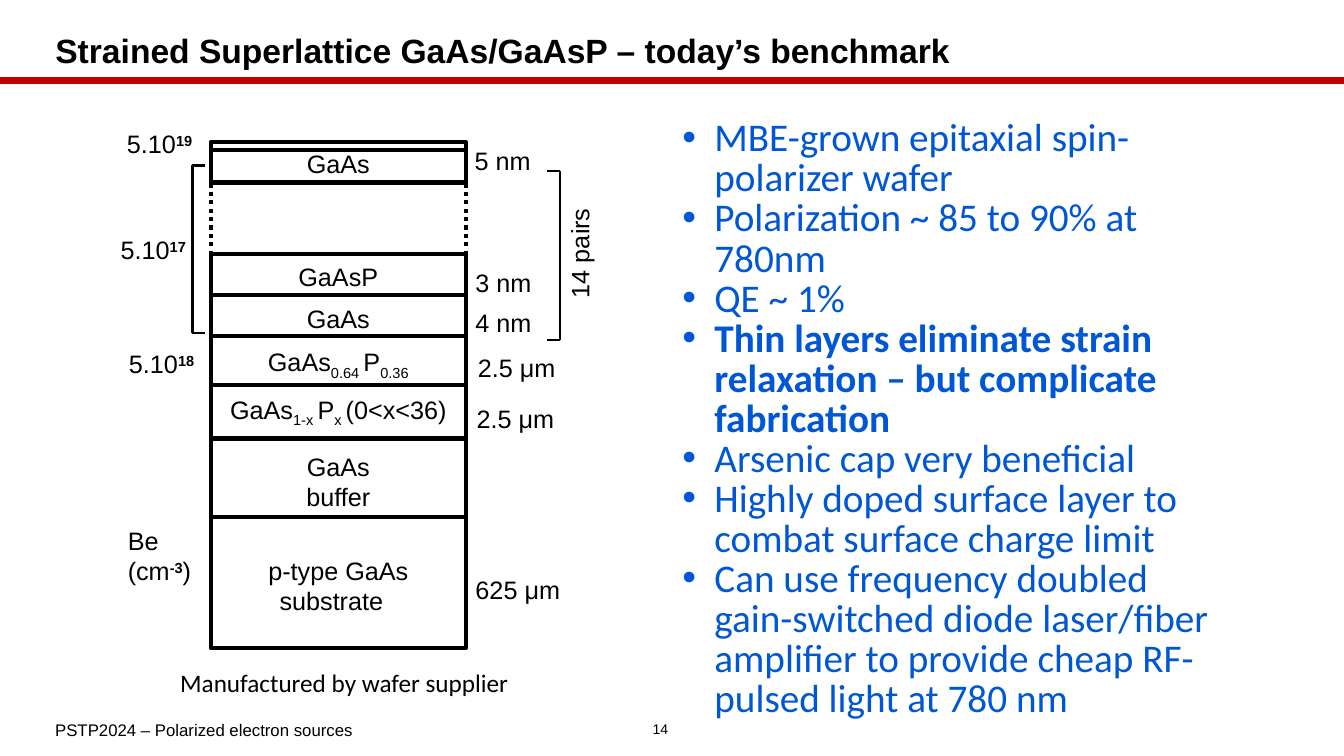
from lxml import etree
from pptx import Presentation
from pptx import util as u
from pptx.dml.color import RGBColor
from pptx.enum import dml, shapes, text
from pptx.oxml.ns import qn

BLACK, RED, BLUE = "000000", "C00000", "0057D6"
LEFT, RIGHT = 5.31, 11.74
LABEL = dict(name="Arial", size=u.Pt(18))
CENTER = text.PP_ALIGN.CENTER
SUP, SUB = 30000, -25000


def rgb(value):
    """Return the colour for a hex string."""
    return RGBColor.from_string(value)


def format_font(font, fmt, color=BLACK):
    """Set font attributes from a dict, and the font colour."""
    for key, value in fmt.items():
        setattr(font, key, value)
    font.color.rgb = rgb(color)


def add_run(p, content, fmt, color=BLACK):
    """Add a run given as a string or as (string, baseline)."""
    words, baseline = (content, 0) if isinstance(content, str) else content
    r = p.add_run()
    r.text = words
    format_font(r.font, fmt, color)
    if baseline:
        r._r.get_or_add_rPr().set("baseline", str(baseline))
    if baseline > 0:
        r.font.bold = True


def add_text(s, x, y, w, h, lines, fmt=LABEL, align=None, wrap=False,
             anchor=text.MSO_ANCHOR.TOP):
    """Add a text box holding lines, each a list of runs."""
    sp = s.shapes.add_textbox(u.Cm(x), u.Cm(y), u.Cm(w), u.Cm(h))
    tf = sp.text_frame
    tf.word_wrap = wrap
    tf.vertical_anchor = anchor
    for i, line in enumerate(lines):
        p = tf.paragraphs[0] if i == 0 else tf.add_paragraph()
        p.alignment = align
        for content in line:
            add_run(p, content, fmt)
    return sp


def add_line(s, x1, y1, x2, y2, width=3, color=BLACK, dash=None):
    """Add a straight line without a shadow."""
    ends = [u.Cm(v) for v in (x1, y1, x2, y2)]
    cxn = s.shapes.add_connector(shapes.MSO_CONNECTOR.STRAIGHT, *ends)
    cxn.line.width = u.Pt(width)
    cxn.line.color.rgb = rgb(color)
    if dash:
        cxn.line.dash_style = dash
    etree.SubElement(cxn._element.spPr, qn("a:effectLst"))


def add_bracket(s, x, top, bottom, tick):
    """Add a square bracket whose ticks reach the x position tick."""
    add_line(s, x, top, x, bottom, 1.5)
    for y in (top, bottom):
        add_line(s, x, y, tick, y, 1.5)


def add_frame(s, y, h):
    """Add an outlined block of the layer stack."""
    sp = s.shapes.add_shape(shapes.MSO_SHAPE.RECTANGLE, u.Cm(LEFT), u.Cm(y),
                            u.Cm(RIGHT - LEFT), u.Cm(h))
    sp.shadow.inherit = False
    sp.fill.background()
    sp.line.color.rgb = rgb(BLACK)
    sp.line.width = u.Pt(3)


def add_title(s, words):
    """Place and format the title, with the red rule below it."""
    add_line(s, 0, 2.03, 33.86, 2.03, 4.5, RED)
    sp = s.shapes.title
    for key, value in dict(left=1.14, top=0.66, width=31.34, height=1.35).items():
        setattr(sp, key, u.Cm(value))
    tf = sp.text_frame
    tf.auto_size = text.MSO_AUTO_SIZE.NONE
    tf.vertical_anchor = text.MSO_ANCHOR.MIDDLE
    p = tf.paragraphs[0]
    p.alignment = text.PP_ALIGN.LEFT
    p.line_spacing = 0.9
    add_run(p, words, dict(name="Arial", size=u.Pt(24), bold=True))


def add_bullets(s, x, y, w, h, items):
    """Add a bulleted list of (words, bold) items."""
    sp = add_text(s, x, y, w, h, [[] for _ in items], wrap=True)
    for p, (words, bold) in zip(sp.text_frame.paragraphs, items):
        pPr = p._p.get_or_add_pPr()
        pPr.set("marL", str(u.Cm(0.81)))
        pPr.set("indent", str(-u.Cm(0.81)))
        etree.SubElement(pPr, qn("a:buFont")).set("typeface", "Arial")
        etree.SubElement(pPr, qn("a:buChar")).set("char", "•")
        p.line_spacing = 0.85
        add_run(p, words, dict(name="Calibri", size=u.Pt(28), bold=bold), BLUE)


def add_layers(s):
    """Draw the layer stack with its material names."""
    add_frame(s, 3.58, 1.02)
    add_frame(s, 6.4, 9.93)
    for y in (3.78, 7.44, 8.46, 9.7, 11.05, 13.03):
        add_line(s, LEFT, y, RIGHT, y)
    for x in (LEFT, RIGHT):
        add_line(s, x, 4.62, x, 6.43, dash=dml.MSO_LINE.ROUND_DOT)
    names = [
        (3.61, 2.6, [["GaAs"]]),
        (6.45, 2.8, [["GaAsP"]]),
        (7.52, 2.6, [["GaAs"]]),
        (8.61, 5, [["GaAs", ("0.64 ", SUB), "P", ("0.36", SUB)]]),
        (9.8, 6.9, [["GaAs", ("1-x ", SUB), "P", ("x ", SUB), "(0<x<36)"]]),
        (11.25, 3.68, [["GaAs buffer"]]),
        (13.87, 4.4, [["p-type GaAs"], ["substrate"]]),
    ]
    for y, w, lines in names:
        sp = add_text(s, (LEFT + RIGHT - w) / 2, y, w, 1.02 * len(lines), lines,
                      align=CENTER, wrap=True)
    sp.text_frame.paragraphs[1]._p.get_or_add_pPr().set("marR", str(u.Cm(0.35)))


def add_annotations(s):
    """Add doping levels, thicknesses and brackets around the stack."""
    for x, y, exponent in ((2.95, 3.12, "19"), (2.79, 5.79, "17"), (3, 8.66, "18")):
        add_text(s, x, y, 2.24, 1.02, [["5.10", (exponent, SUP)]])
    add_text(s, 2.97, 13.11, 2.16, 1.78, [["Be"], ["(cm", ("-3", SUP), ")"]])
    thicknesses = [(11.71, 3.53, 1.93, "5 nm"), (11.73, 6.6, 1.93, "3 nm"),
                   (11.73, 7.62, 1.93, "4 nm"), (11.79, 8.76, 2.49, "2.5 μm"),
                   (11.76, 10.03, 2.49, "2.5 μm"), (11.73, 14.35, 2.67, "625 μm")]
    for x, y, w, words in thicknesses:
        add_text(s, x, y, w, 1.02, [[words]])
    add_bracket(s, 4.85, 4.17, 8.38, 5.17)
    add_bracket(s, 14.1, 4.32, 8.56, 13.77)
    pairs = add_text(s, 13.2, 5.87, 2.8, 1.02, [["14 pairs"]], align=CENTER)
    pairs.rotation = 270


def main():
    """Build the slide and save it."""
    prs = Presentation()
    prs.slide_width, prs.slide_height = u.Cm(33.86), u.Cm(19.05)
    s = prs.slides.add_slide(prs.slide_layouts[5])
    add_title(s, "Strained Superlattice GaAs/GaAsP – today’s benchmark")
    middle = text.MSO_ANCHOR.MIDDLE
    add_text(s, 1.14, 17.96, 14.5, 0.86, [["PSTP2024 – Polarized electron sources"]],
             dict(name="Arial", size=u.Pt(12)), wrap=True, anchor=middle)
    add_text(s, 15.65, 17.96, 1.98, 0.84, [["14"]],
             dict(name="Arial", size=u.Pt(10)), CENTER, True, middle)
    add_layers(s)
    add_annotations(s)
    add_bullets(s, 16.94, 2.9, 13.79, 15.52, [
        ("MBE-grown epitaxial spin-polarizer wafer", False),
        ("Polarization ~ 85 to 90% at 780nm", False),
        ("QE ~ 1%", False),
        ("Thin layers eliminate strain relaxation – but complicate fabrication", True),
        ("Arsenic cap very beneficial", False),
        ("Highly doped surface layer to combat surface charge limit", False),
        ("Can use frequency doubled gain-switched diode laser/fiber amplifier "
         "to provide cheap RF-pulsed light at 780 nm", False),
    ])
    add_text(s, 4.29, 16.69, 8.97, 1.02, [["Manufactured by wafer supplier"]],
             dict(name="Calibri", size=u.Pt(18)))
    prs.save("out.pptx")


if __name__ == "__main__":
    main()
